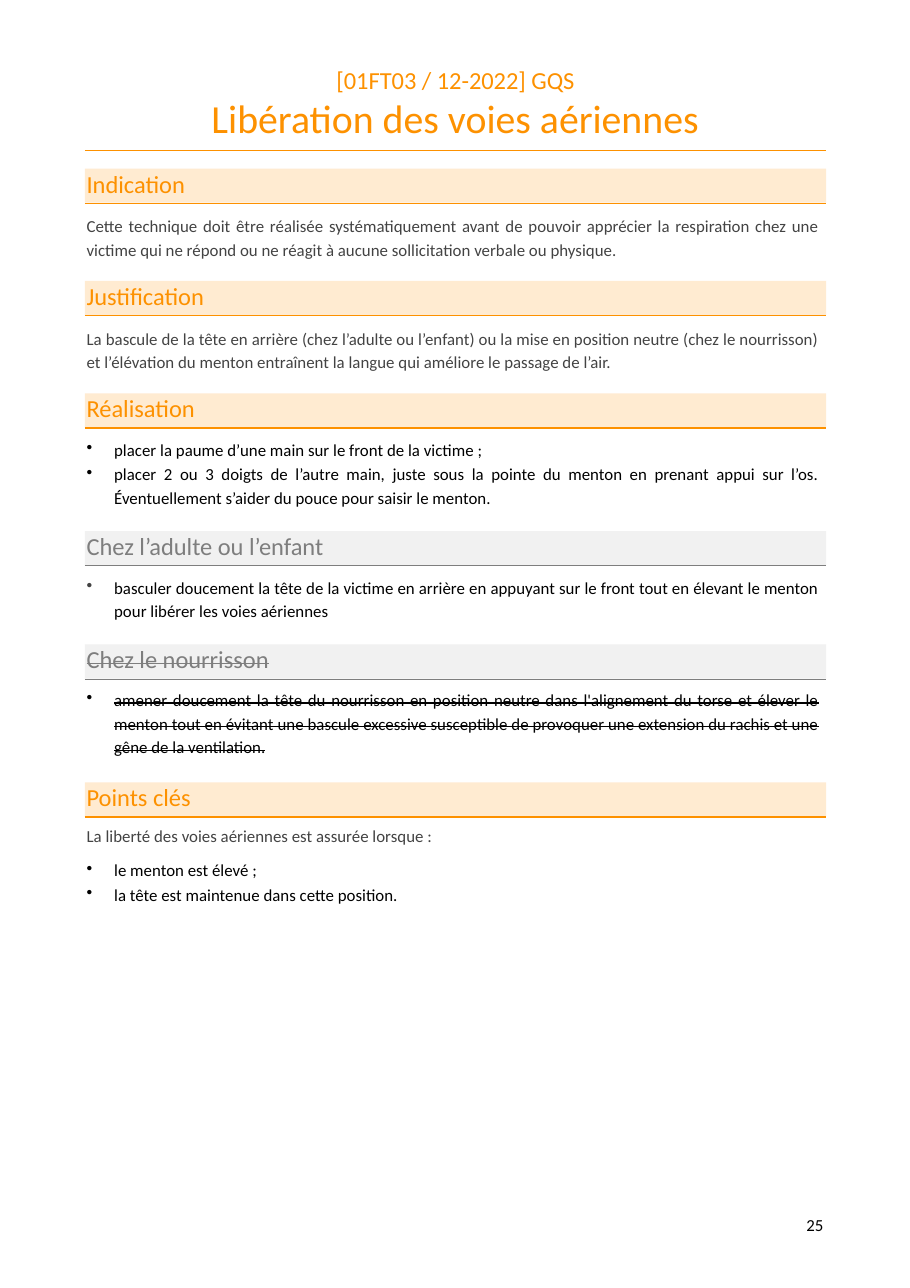
from dataclasses import dataclass

from lxml.etree import SubElement
from pptx import Presentation
from pptx.dml.color import RGBColor
from pptx.enum.shapes import MSO_CONNECTOR, MSO_SHAPE
from pptx.enum.text import MSO_ANCHOR, PP_ALIGN as Align
from pptx.oxml.ns import qn
from pptx.util import Inches, Pt

PAGE_WIDTH, PAGE_HEIGHT = Inches(8.26), Inches(11.69)
FONT = "Calibri"
COLORS = {
    "orange": "FD9100",
    "peach": "FFEBD1",
    "gray": "7E7E7E",
    "mist": "F1F1F1",
    "body": "434343",
    "black": "000000",
}
MARGIN, CONTENT_WIDTH = 9.32, 81.48
TEXT_LEFT, TEXT_WIDTH = 9.52, 80.5
BAND_HEIGHT = 2.65


@dataclass
class Item:
    text: str
    bullet: str = ""
    leading: float = 1.17
    before: float = 0


@dataclass
class Section:
    heading: str
    top: float
    body_gap: float
    items: list
    accent: str = "orange"
    tint: str = "peach"
    struck: bool = False


SECTIONS = [
    Section("Indication", 13.09, 3.42, [
        Item("Cette technique doit être réalisée systématiquement avant de pouvoir apprécier "
             "la respiration chez une victime qui ne répond ou ne réagit à aucune "
             "sollicitation verbale ou physique."),
    ]),
    Section("Justification", 21.81, 3.42, [
        Item("La bascule de la tête en arrière (chez l’adulte ou l’enfant) ou la mise en "
             "position neutre (chez le nourrisson) et l’élévation du menton entraînent la "
             "langue qui améliore le passage de l’air."),
    ]),
    Section("Réalisation", 30.54, 3.59, [
        Item("placer la paume d’une main sur le front de la victime ;", "black", 1),
        Item("placer 2 ou 3 doigts de l’autre main, juste sous la pointe du menton en prenant "
             "appui sur l’os. Éventuellement s’aider du pouce pour saisir le menton.",
             "black", before=0.6),
    ]),
    Section("Chez l’adulte ou l’enfant", 41.23, 3.34, [
        Item("basculer doucement la tête de la victime en arrière en appuyant sur le front "
             "tout en élevant le menton pour libérer les voies aériennes", "body"),
    ], "gray", "mist"),
    Section("Chez le nourrisson", 50.04, 3.25, [
        Item("amener doucement la tête du nourrisson en position neutre dans l'alignement du "
             "torse et élever le menton tout en évitant une bascule excessive susceptible de "
             "provoquer une extension du rachis et une gêne de la ventilation.", "black"),
    ], "gray", "mist", True),
    Section("Points clés", 60.74, 3.34, [
        Item("La liberté des voies aériennes est assurée lorsque :", leading=1),
        Item("le menton est élevé ;", "black", 1, 9.5),
        Item("la tête est maintenue dans cette position.", "black", 1, 2.8),
    ]),
]


def across(percent):
    return round(PAGE_WIDTH * percent / 100)


def down(percent):
    return round(PAGE_HEIGHT * percent / 100)


def rgb(name):
    return RGBColor.from_string(COLORS[name])


def write(paragraph, text, size, color, align=Align.LEFT, struck=False):
    paragraph.text = text
    paragraph.alignment = align
    for run in paragraph.runs:
        run.font.name = FONT
        run.font.size = Pt(size)
        run.font.color.rgb = rgb(color)
        if struck:
            run._r.get_or_add_rPr().set("strike", "sngStrike")


def add_bullet(paragraph, color):
    properties = paragraph._p.get_or_add_pPr()
    properties.set("marL", str(Inches(0.25)))
    properties.set("indent", str(-Inches(0.25)))
    tone = SubElement(properties, qn("a:buClr"))
    SubElement(tone, qn("a:srgbClr")).set("val", COLORS[color])
    SubElement(properties, qn("a:buChar")).set("char", "•")


def clear_insets(frame):
    frame.margin_left = frame.margin_right = frame.margin_top = frame.margin_bottom = 0
    frame.vertical_anchor = MSO_ANCHOR.TOP
    frame.word_wrap = True


def add_text(slide, left, top, width, height):
    box = slide.shapes.add_textbox(across(left), down(top), across(width), down(height))
    clear_insets(box.text_frame)
    return box.text_frame


def add_rule(slide, top, color):
    rule = slide.shapes.add_connector(
        MSO_CONNECTOR.STRAIGHT, across(MARGIN), down(top),
        across(MARGIN + CONTENT_WIDTH), down(top))
    rule.line.color.rgb = rgb(color)
    rule.line.width = Pt(0.72)
    SubElement(rule._element.spPr, qn("a:effectLst"))


def add_heading(slide, section):
    band = slide.shapes.add_shape(
        MSO_SHAPE.RECTANGLE, across(MARGIN), down(section.top),
        across(CONTENT_WIDTH), down(BAND_HEIGHT))
    band.shadow.inherit = False
    band.fill.solid()
    band.fill.fore_color.rgb = rgb(section.tint)
    band.line.fill.background()
    clear_insets(band.text_frame)
    band.text_frame.margin_left = across(TEXT_LEFT - MARGIN)
    write(band.text_frame.paragraphs[0], section.heading, 16, section.accent,
          struck=section.struck)
    add_rule(slide, section.top + BAND_HEIGHT + 0.04, section.accent)


def add_body(slide, section):
    frame = add_text(slide, TEXT_LEFT, section.top + section.body_gap, TEXT_WIDTH, 4)
    for index, item in enumerate(section.items):
        paragraph = frame.add_paragraph() if index else frame.paragraphs[0]
        write(paragraph, item.text, 11, "black" if item.bullet else "body",
              Align.JUSTIFY, section.struck)
        paragraph.line_spacing = item.leading
        paragraph.space_before = Pt(item.before)
        if item.bullet:
            add_bullet(paragraph, item.bullet)


def add_title(slide):
    for text, top, height, size in (("[01FT03 / 12-2022] GQS", 5.08, 2.3, 16),
                                    ("Libération des voies aériennes", 7.3, 3.8, 26)):
        frame = add_text(slide, MARGIN, top, CONTENT_WIDTH, height)
        write(frame.paragraphs[0], text, size, "orange", Align.CENTER)
    add_rule(slide, 11.68, "orange")


def add_page_number(slide, number):
    frame = add_text(slide, 88.62, 94.53, 2.5, 1.6)
    write(frame.paragraphs[0], number, 11, "black")
    frame.paragraphs[0].line_spacing = Pt(11.4)


def main():
    deck = Presentation()
    deck.slide_width, deck.slide_height = PAGE_WIDTH, PAGE_HEIGHT
    slide = deck.slides.add_slide(deck.slide_layouts[6])
    add_title(slide)
    for section in SECTIONS:
        add_heading(slide, section)
        add_body(slide, section)
    add_page_number(slide, "25")
    deck.save("out.pptx")


if __name__ == "__main__":
    main()
